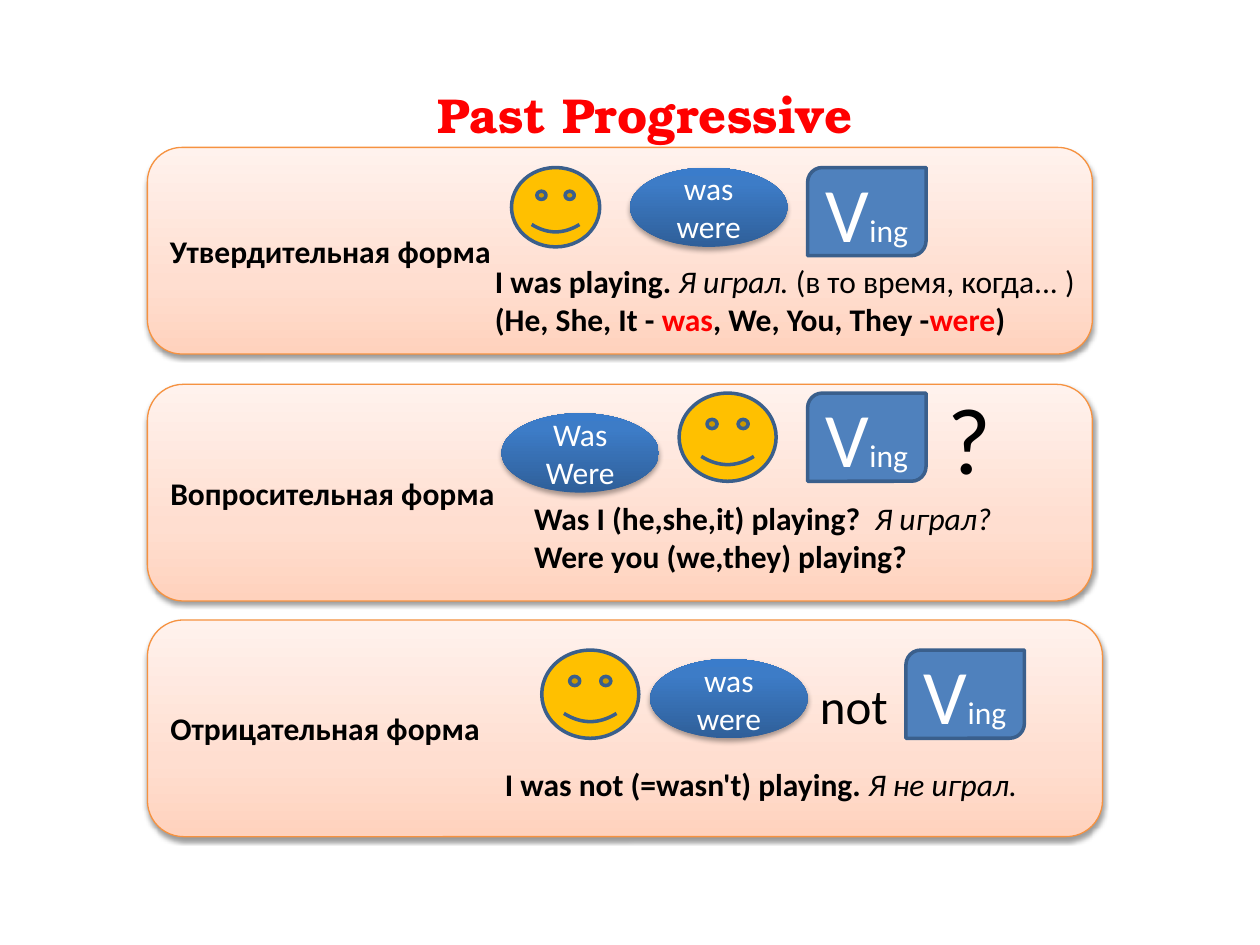
from copy import deepcopy
from dataclasses import dataclass

from lxml import etree
from pptx import Presentation
from pptx.dml.color import RGBColor
from pptx.enum import shapes, text
from pptx.oxml.ns import qn
from pptx.util import Inches, Pt


@dataclass(frozen=True)
class Theme:
    body_font: str = "Calibri"
    title_font: str = "TeX Gyre Bonum"
    black: str = "000000"
    white: str = "FFFFFF"
    red: str = "FF0000"
    smiley: str = "FFC000"
    verb: str = "4F81BD"
    outline: str = "3A5F8C"
    panel_line: str = "F69240"
    panel_stops: tuple = ((0, "FFD2BD"), (0.35, "FFDED0"), (1, "FFF2ED"))
    oval_stops: tuple = ((0, "2F5F99"), (0.8, "3D7CC7"), (1, "3A7CCB"))
    body: int = 18
    large: int = 28
    verb_size: int = 44
    mark: int = 54


theme = Theme()
SHAPE = shapes.MSO_SHAPE
CENTER = text.PP_ALIGN.CENTER
LEFT = text.PP_ALIGN.LEFT
MIDDLE = text.MSO_ANCHOR.MIDDLE


def write(shape, lines, size=theme.body, color=theme.black, align=LEFT,
          font=theme.body_font, wrap=True):
    """Fill a shape with lines, each a list of (wording, font overrides)."""
    frame = shape.text_frame
    frame.word_wrap = wrap
    for index, spans in enumerate(lines):
        para = frame.paragraphs[0] if index == 0 else frame.add_paragraph()
        para.alignment = align
        para.font.name = font
        para.font.size = Pt(size)
        para.font.color.rgb = RGBColor.from_string(color)
        for wording, style in spans:
            span = para.add_run()
            span.text = wording
            for name, value in style.items():
                if name == "color":
                    span.font.color.rgb = RGBColor.from_string(value)
                else:
                    setattr(span.font, name, value)


def shade(shape, stops, opacity, distance):
    """Give a shape a three-stop upward gradient and a soft shadow below."""
    shape.fill.gradient()
    shape.fill.gradient_angle = 90
    stop_list = shape.element.spPr.find(".//" + qn("a:gsLst"))
    stop_list.append(deepcopy(stop_list[0]))
    for stop, (position, color) in zip(shape.fill.gradient_stops, stops):
        stop.position = position
        stop.color.rgb = RGBColor.from_string(color)
    shape.shadow.inherit = False
    effects = shape.element.spPr.find(qn("a:effectLst"))
    shadow = etree.SubElement(
        effects, qn("a:outerShdw"), blurRad=str(Pt(3.1)),
        dist=str(Pt(distance)), dir="5400000", rotWithShape="0")
    tint = etree.SubElement(shadow, qn("a:srgbClr"), val=theme.black)
    etree.SubElement(tint, qn("a:alpha"), val=str(opacity * 1000))


deck = Presentation()
deck.slide_width, deck.slide_height = Inches(10), Inches(7.5)
page = deck.slides.add_slide(deck.slide_layouts[6])

bold, italic = {"bold": True}, {"italic": True}
bold_red = {"bold": True, "color": theme.red}

title = page.shapes.add_textbox(Inches(2.11), Inches(0.62), Inches(6.02), Inches(0.57))
write(title, [[("Past Progressive", bold)]], theme.large, theme.red, CENTER, theme.title_font)

panels = [
    ("Утвердительная форма", 1.17, 7.5, 1.64),
    ("Вопросительная форма", 3.05, 7.5, 1.72),
    ("Отрицательная форма", 4.92, 7.58, 1.72),
]
for label, top, width, height in panels:
    panel = page.shapes.add_shape(
        SHAPE.ROUNDED_RECTANGLE, Inches(1.17), Inches(top), Inches(width), Inches(height))
    shade(panel, theme.panel_stops, 38, 1.6)
    panel.line.color.rgb = RGBColor.from_string(theme.panel_line)
    panel.line.width = Pt(0.75)
    panel.text_frame.vertical_anchor = MIDDLE
    write(panel, [[(label, bold)]])

# Subjects (smileys) and verbs share one outline style
verb_spans = [("V", {"size": Pt(theme.verb_size)}), ("ing", {})]
symbols = [
    (SHAPE.SMILEY_FACE, 4.06, 1.33, 0.7, 0.63),
    (SHAPE.SMILEY_FACE, 5.39, 3.12, 0.77, 0.7),
    (SHAPE.SMILEY_FACE, 4.3, 5.16, 0.77, 0.7),
    (SHAPE.ROUND_2_DIAG_RECTANGLE, 6.41, 1.33, 0.94, 0.7),
    (SHAPE.ROUND_2_DIAG_RECTANGLE, 6.41, 3.12, 0.94, 0.7),
    (SHAPE.ROUND_2_DIAG_RECTANGLE, 7.19, 5.16, 0.94, 0.7),
]
for kind, *place in symbols:
    symbol = page.shapes.add_shape(kind, *map(Inches, place))
    is_verb = kind == SHAPE.ROUND_2_DIAG_RECTANGLE
    symbol.shadow.inherit = False
    symbol.fill.solid()
    symbol.fill.fore_color.rgb = RGBColor.from_string(theme.verb if is_verb else theme.smiley)
    symbol.line.color.rgb = RGBColor.from_string(theme.outline)
    symbol.line.width = Pt(2)
    if is_verb:
        symbol.text_frame.vertical_anchor = MIDDLE
        write(symbol, [verb_spans], color=theme.white, align=CENTER)

for wording, left, top in [("was were", 5, 1.33), ("Was Were", 3.98, 3.28), ("was were", 5.16, 5.23)]:
    auxiliary = page.shapes.add_shape(
        SHAPE.OVAL, Inches(left), Inches(top), Inches(1.25), Inches(0.63))
    shade(auxiliary, theme.oval_stops, 35, 1.8)
    auxiliary.line.fill.background()
    auxiliary.text_frame.vertical_anchor = MIDDLE
    write(auxiliary, [[(wording, {})]], color=theme.white, align=CENTER)

question = page.shapes.add_textbox(Inches(7.42), Inches(2.97), Inches(0.55), Inches(1.01))
write(question, [[("?", {})]], theme.mark, wrap=False)
negation = page.shapes.add_textbox(Inches(6.41), Inches(5.31), Inches(0.86), Inches(0.57))
write(negation, [[("not", {})]], theme.large)

examples = [
    ((3.83, 2.03, 4.92, 0.71), [
        [("I was playing. ", bold), ("Я играл.", italic), (" (в то время, когда... )", {})],
        [("(He, She, It - ", bold), ("was", bold_red), (", We, You, They -", bold),
         ("were", bold_red), (")", bold)],
    ]),
    ((4.14, 3.91, 4.3, 0.71), [
        [("Was I (he,she,it) playing?  ", bold), ("Я играл?", italic)],
        [("Were you (we,they) playing?", bold)],
    ]),
    ((3.91, 6.02, 4.53, 0.71), [
        [("I was not (=wasn't) playing. ", bold), ("Я не играл.", italic)],
    ]),
]
for place, lines in examples:
    write(page.shapes.add_textbox(*map(Inches, place)), lines)

deck.save("out.pptx")
